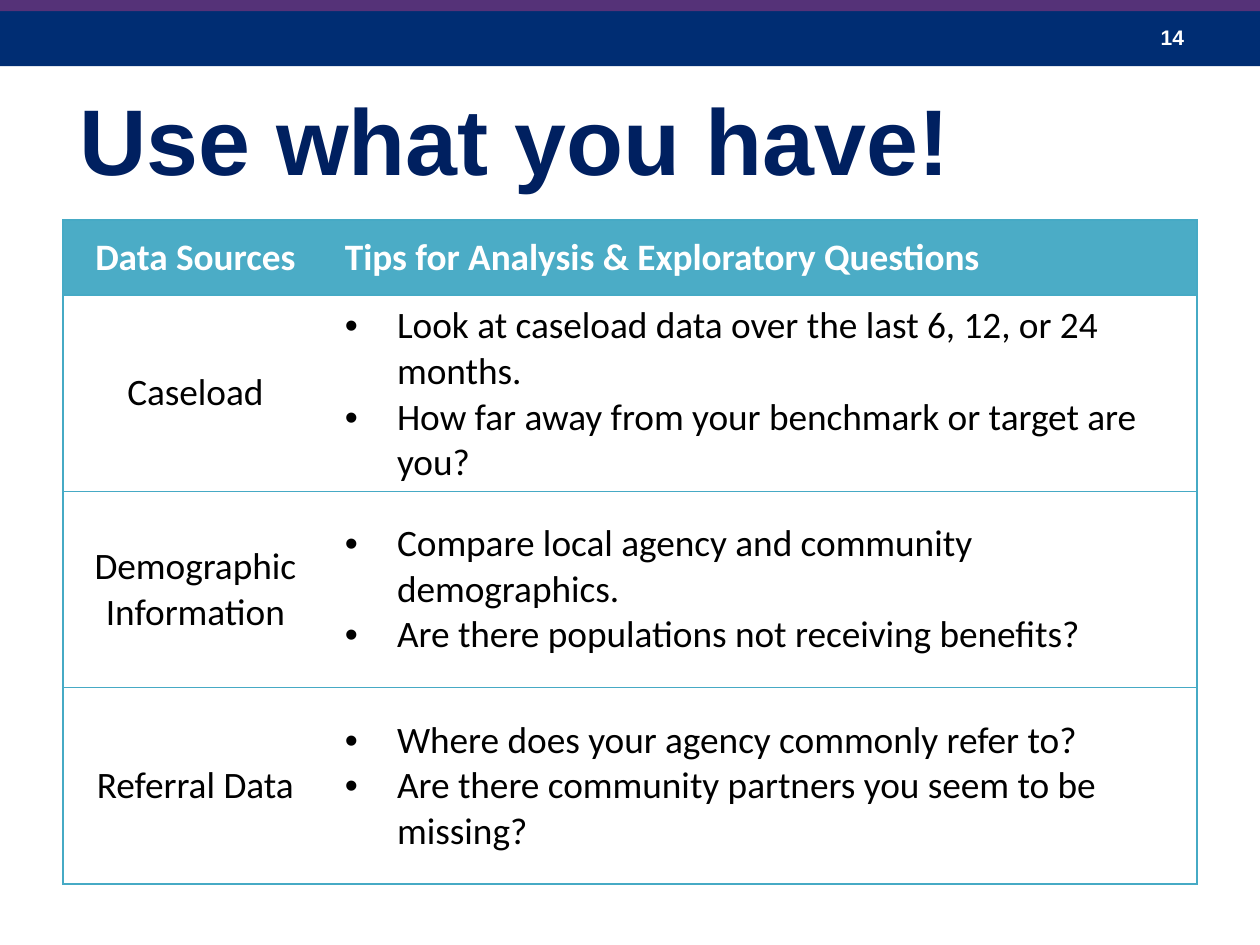
from lxml import etree
from pptx import Presentation
from pptx.dml.color import RGBColor
from pptx.enum.shapes import MSO_SHAPE as Shape
from pptx.enum.text import MSO_ANCHOR as Anchor, PP_ALIGN as Align
from pptx.oxml.ns import qn
from pptx.util import Cm, Pt

WHITE = RGBColor(0xFF, 0xFF, 0xFF)
BLACK = RGBColor(0, 0, 0)
NAVY = RGBColor(0x00, 0x2D, 0x73)
PURPLE = RGBColor(0x55, 0x32, 0x78)
TITLE_BLUE = RGBColor(0x00, 0x20, 0x60)
TEAL = RGBColor(0x4B, 0xAC, 0xC6)
BORDER_TEAL = RGBColor(0x46, 0xAA, 0xC5)

SLIDE_WIDTH, SLIDE_HEIGHT = Cm(19.05), Cm(14.29)
COLUMN_WIDTHS = Cm(4.01), Cm(13.14)
HEADER_HEIGHT, SOURCE_HEIGHT = Cm(1.13), Cm(2.97)

HEADINGS = "Data Sources", "Tips for Analysis & Exploratory Questions"
SOURCES = [
    ("Caseload", [
        "Look at caseload data over the last 6, 12, or 24 months.",
        "How far away from your benchmark or target are you?",
    ]),
    ("Demographic Information", [
        "Compare local agency and community demographics.",
        "Are there populations not receiving benefits?",
    ]),
    ("Referral Data", [
        "Where does your agency commonly refer to?",
        "Are there community partners you seem to be missing?",
    ]),
]


def add_run(paragraph, text, font_name, size, color, bold=False):
    run = paragraph.add_run()
    run.text = text
    run.font.name = font_name
    run.font.size = Pt(size)
    run.font.bold = bold
    run.font.color.rgb = color


def add_band(slide, top, height, color):
    band = slide.shapes.add_shape(Shape.RECTANGLE, 0, top, SLIDE_WIDTH, height)
    band.shadow.inherit = False
    band.fill.solid()
    band.fill.fore_color.rgb = color
    band.line.fill.background()


def add_label(slide, text, left, top, width, height, size, color, anchor):
    frame = slide.shapes.add_textbox(left, top, width, height).text_frame
    frame.word_wrap = True
    frame.vertical_anchor = anchor
    add_run(frame.paragraphs[0], text, "Arial", size, color, bold=True)


def set_bullet(paragraph):
    properties = paragraph._p.get_or_add_pPr()
    properties.set("marL", str(Cm(0.79)))
    properties.set("indent", str(-Cm(0.79)))
    etree.SubElement(properties, qn("a:buFont")).set("typeface", "Arial")
    etree.SubElement(properties, qn("a:buChar")).set("char", "•")


def set_borders(cell, visible_sides):
    """Draw the sides named by the letters L, R, T and B; clear the others."""
    properties = cell._tc.get_or_add_tcPr()
    for position, side in enumerate("LRTB"):
        border = etree.Element(qn(f"a:ln{side}"), w=str(Pt(0.75)))
        if side in visible_sides:
            fill = etree.SubElement(border, qn("a:solidFill"))
            etree.SubElement(fill, qn("a:srgbClr")).set("val", str(BORDER_TEAL))
        else:
            etree.SubElement(border, qn("a:noFill"))
        properties.insert(position, border)


def fill_cell(cell, lines, color, fill, sides, bold=False, centered=False, bulleted=False):
    cell.vertical_anchor = Anchor.MIDDLE
    cell.fill.solid()
    cell.fill.fore_color.rgb = fill
    set_borders(cell, sides)
    frame = cell.text_frame
    for index, line in enumerate(lines):
        paragraph = frame.add_paragraph() if index else frame.paragraphs[0]
        paragraph.alignment = Align.CENTER if centered else Align.LEFT
        if bulleted:
            set_bullet(paragraph)
        add_run(paragraph, line, "Calibri", 16, color, bold)


def add_source_table(slide):
    height = HEADER_HEIGHT + SOURCE_HEIGHT * len(SOURCES)
    table = slide.shapes.add_table(
        len(SOURCES) + 1, len(COLUMN_WIDTHS),
        Cm(0.95), Cm(3.33), sum(COLUMN_WIDTHS), height).table
    for column, width in zip(table.columns, COLUMN_WIDTHS):
        column.width = width
    for row in table.rows:
        row.height = SOURCE_HEIGHT
    table.rows[0].height = HEADER_HEIGHT

    for column, (heading, outer_side) in enumerate(zip(HEADINGS, "LR")):
        fill_cell(table.cell(0, column), [heading], WHITE, TEAL,
                  outer_side + "TB", bold=True, centered=column == 0)
    for row, (source, tips) in enumerate(SOURCES, start=1):
        fill_cell(table.cell(row, 0), [source], BLACK, WHITE, "LTB", centered=True)
        fill_cell(table.cell(row, 1), tips, BLACK, WHITE, "RTB", bulleted=True)


def main():
    deck = Presentation()
    deck.slide_width, deck.slide_height = SLIDE_WIDTH, SLIDE_HEIGHT
    slide = deck.slides.add_slide(deck.slide_layouts[6])
    add_band(slide, Cm(0.17), Cm(0.83), NAVY)
    add_band(slide, 0, Cm(0.17), PURPLE)
    add_label(slide, "14", Cm(17.3), Cm(0.25), Cm(1.42), Cm(0.76), 9, WHITE, Anchor.TOP)
    add_label(slide, "Use what you have!", Cm(0.95), Cm(1.22), Cm(17.15), Cm(1.73),
              40, TITLE_BLUE, Anchor.MIDDLE)
    add_source_table(slide)
    deck.save("out.pptx")


if __name__ == "__main__":
    main()
